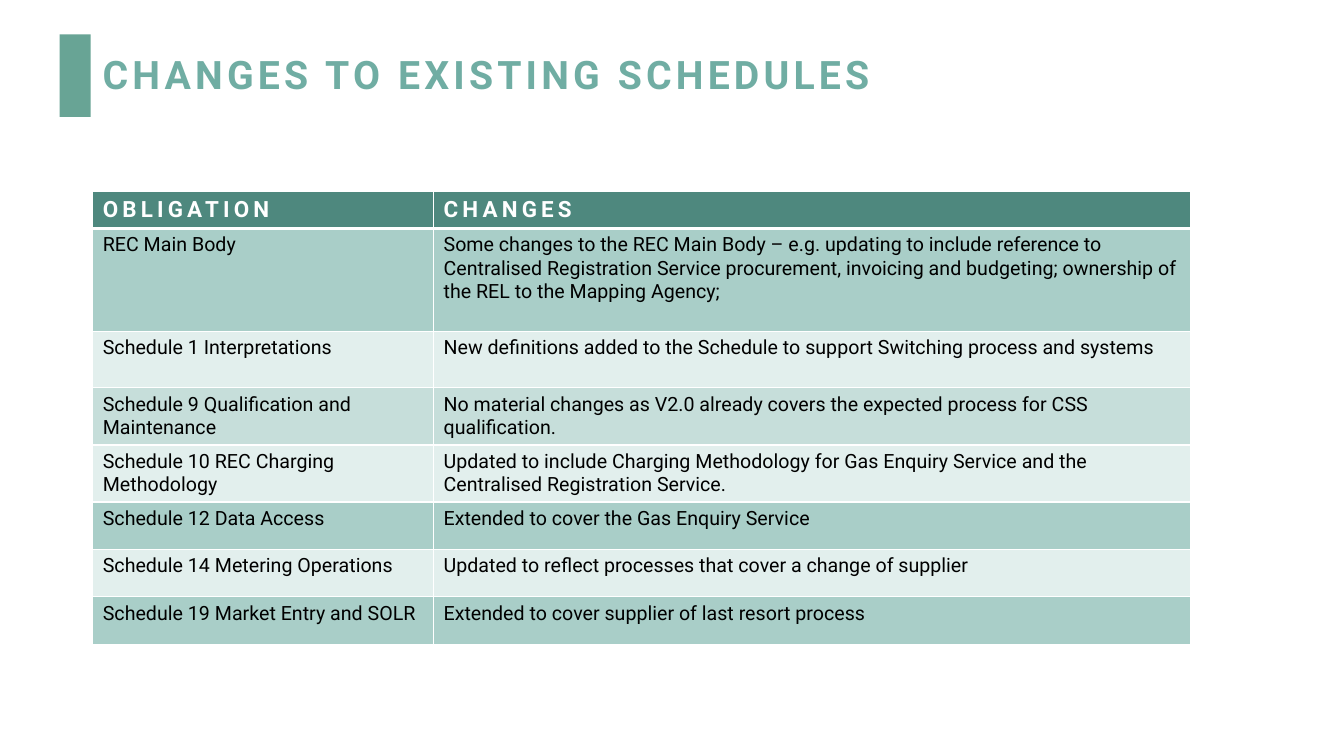
from pptx import Presentation
from pptx.dml.color import RGBColor
from pptx.enum.shapes import MSO_SHAPE
from pptx.enum.text import MSO_ANCHOR
from pptx.oxml.ns import qn
from pptx.util import Inches, Pt
from lxml import etree

RECTANGLE = MSO_SHAPE.RECTANGLE
TOP, MIDDLE = MSO_ANCHOR.TOP, MSO_ANCHOR.MIDDLE

HEADER, DARK, MEDIUM, LIGHT = "4E887E", "A9CEC8", "C6DEDA", "E2EFED"

HEADINGS = ("OBLIGATION", "CHANGES")
# Each row: height, fill, obligation, changes
SCHEDULES = [
    (1.02, DARK, "REC Main Body",
     "Some changes to the REC Main Body – e.g. updating to include reference to "
     "Centralised Registration Service procurement, invoicing and budgeting; "
     "ownership of the REL to the Mapping Agency;"),
    (0.56, LIGHT, "Schedule 1 Interpretations",
     "New definitions added to the Schedule to support Switching process and systems"),
    (0.56, MEDIUM, "Schedule 9 Qualification and Maintenance",
     "No material changes as V2.0 already covers the expected process for CSS "
     "qualification."),
    (0.56, LIGHT, "Schedule 10 REC Charging Methodology",
     "Updated to include Charging Methodology for Gas Enquiry Service and the "
     "Centralised Registration Service."),
    (0.47, DARK, "Schedule 12 Data Access", "Extended to cover the Gas Enquiry Service"),
    (0.47, LIGHT, "Schedule 14 Metering Operations",
     "Updated to reflect processes that cover a change of supplier"),
    (0.47, DARK, "Schedule 19 Market Entry and SOLR",
     "Extended to cover supplier of last resort process"),
]


def color(value):
    return RGBColor.from_string(value)


class SlideBuilder:
    font_name = "Roboto"
    border_color = "FFFFFF"

    def __init__(self, page):
        self.page = page

    def format_text(self, para, size, shade, bold=False, spacing=0):
        for span in para.runs:
            span.font.name = self.font_name
            span.font.size = Pt(size)
            span.font.bold = bold
            span.font.color.rgb = color(shade)
            span.font._element.set("spc", str(spacing * 100))

    def bar(self, left, top, width, height, fill):
        shape = self.page.shapes.add_shape(
            RECTANGLE, Inches(left), Inches(top), Inches(width), Inches(height))
        shape.shadow.inherit = False
        shape.fill.solid()
        shape.fill.fore_color.rgb = color(fill)
        shape.line.fill.background()

    def title(self, left, top, width, height, text, size, shade):
        box = self.page.shapes.add_textbox(
            Inches(left), Inches(top), Inches(width), Inches(height))
        frame = box.text_frame
        frame.word_wrap = True
        frame.vertical_anchor = MIDDLE
        frame.text = text
        para = frame.paragraphs[0]
        para.line_spacing = 0.9
        self.format_text(para, size, shade, bold=True, spacing=3)

    def border(self, cell, side, width):
        properties = cell._tc.get_or_add_tcPr()
        line = etree.SubElement(properties, qn(f"a:ln{side}"), w=str(Pt(width)))
        fill = etree.SubElement(line, qn("a:solidFill"))
        etree.SubElement(fill, qn("a:srgbClr"), val=self.border_color)

    def cell(self, cell, text, fill, anchor, top_border, bottom_border, **style):
        for side, width in zip("LRTB", (1, 1, top_border, bottom_border)):
            self.border(cell, side, width)
        cell.fill.solid()
        cell.fill.fore_color.rgb = color(fill)
        cell.vertical_anchor = anchor
        cell.text_frame.text = text
        self.format_text(cell.text_frame.paragraphs[0], **style)

    def table(self, left, top, widths, header_height, headings, rows):
        heights = [header_height] + [row[0] for row in rows]
        table = self.page.shapes.add_table(
            len(heights), len(widths), Inches(left), Inches(top),
            Inches(sum(widths)), Inches(sum(heights))).table
        for column, width in zip(table.columns, widths):
            column.width = Inches(width)
        for row, height in zip(table.rows, heights):
            row.height = Inches(height)
        for index, heading in enumerate(headings):
            self.cell(table.cell(0, index), heading, HEADER, MIDDLE, 1, 3,
                      size=16, shade="FFFFFF", bold=True, spacing=3)
        for number, (_, fill, *texts) in enumerate(rows, start=1):
            for index, text in enumerate(texts):
                self.cell(table.cell(number, index), text, fill, TOP,
                          3 if number == 1 else 1, 1, size=14, shade="000000")


def main():
    deck = Presentation()
    deck.slide_width, deck.slide_height = Inches(13.33), Inches(7.5)
    builder = SlideBuilder(deck.slides.add_slide(deck.slide_layouts[6]))

    # Heading with accent bar
    builder.bar(0.59, 0.34, 0.31, 0.82, "68A495")
    builder.title(0.92, 0.4, 10.15, 0.72, "CHANGES TO EXISTING SCHEDULES", 28, "70ADA3")

    # Schedule changes
    builder.table(0.92, 1.9, (3.38, 7.51), 0.36, HEADINGS, SCHEDULES)

    deck.save("out.pptx")


if __name__ == "__main__":
    main()
